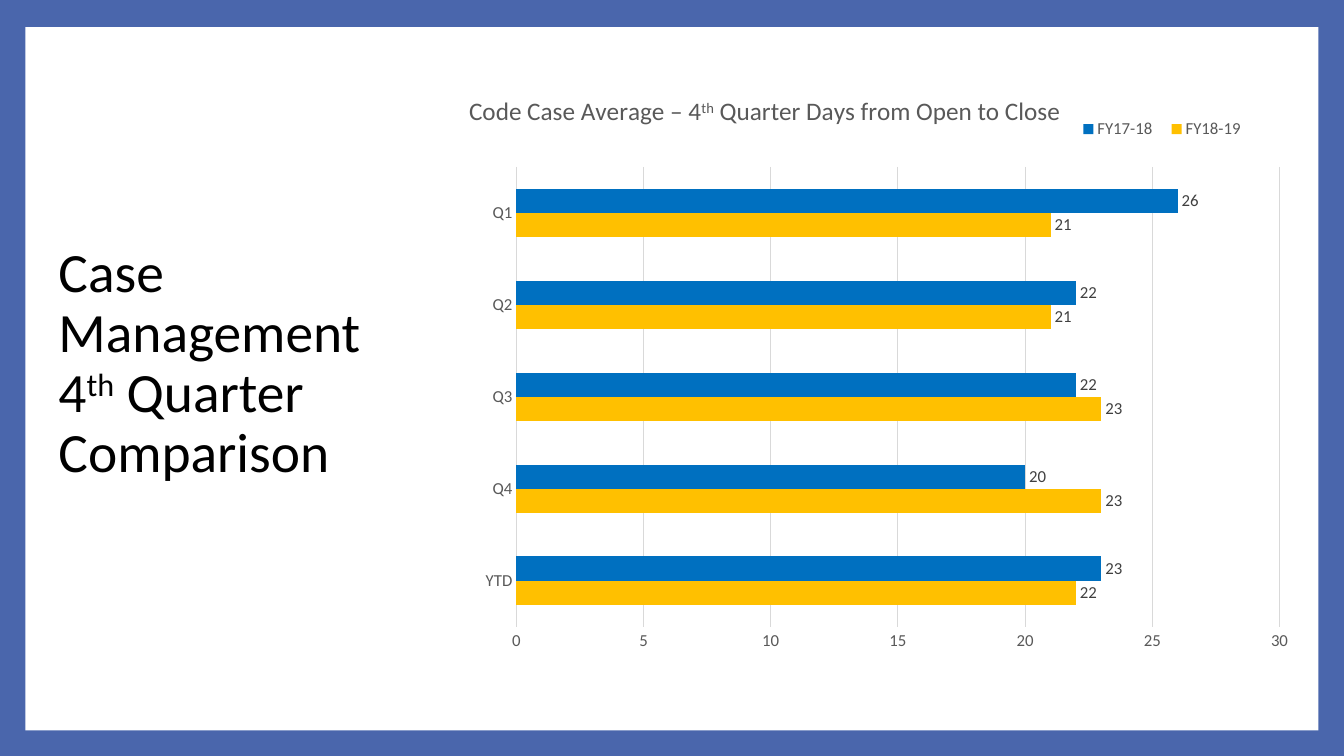
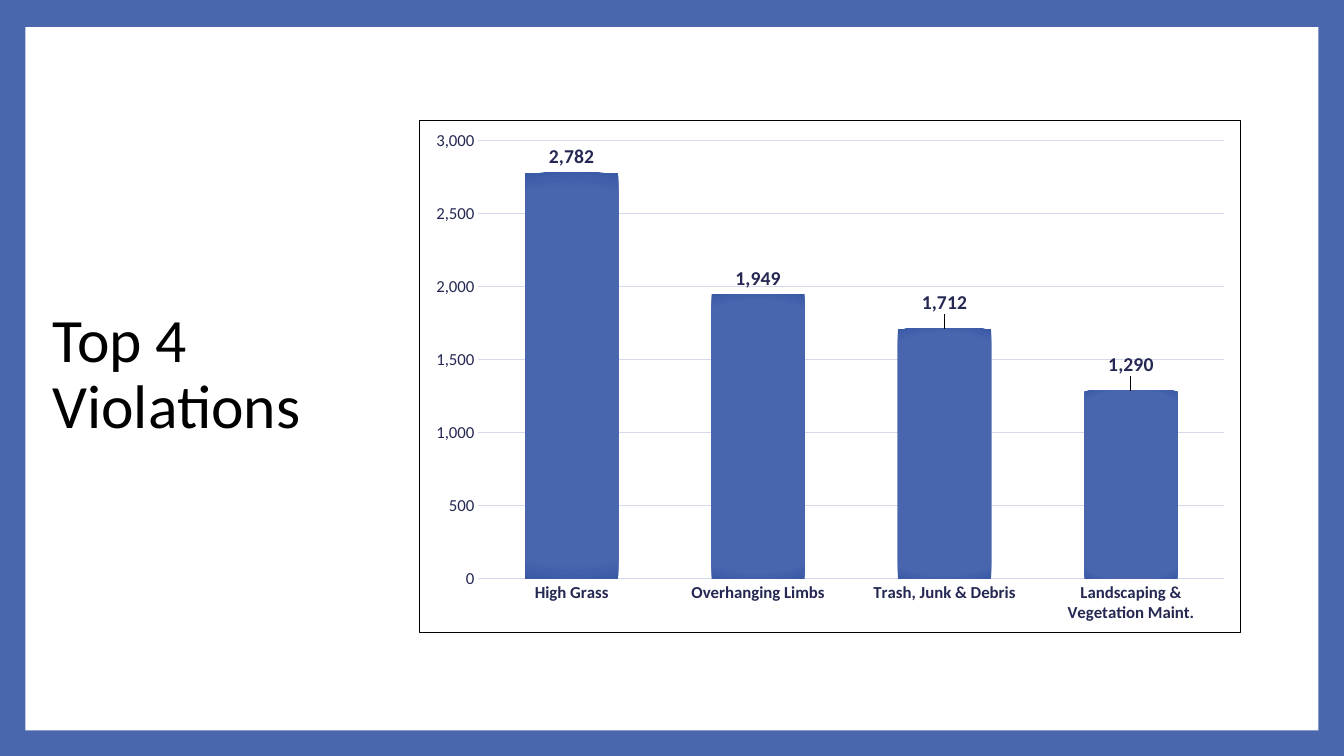
from pptx import Presentation, oxml, util as u
from pptx.chart import data
from pptx.dml.color import RGBColor
from pptx.enum import chart as kinds, shapes, text
from pptx.oxml import ns

FRAME = RGBColor(0x4A, 0x66, 0xAC)
WHITE = RGBColor(0xFF, 0xFF, 0xFF)
BLACK = RGBColor(0, 0, 0)
NAVY = RGBColor(0x24, 0x28, 0x52)
LAVENDER = RGBColor(0xD6, 0xD8, 0xED)
GREY = RGBColor(0x59, 0x59, 0x59)
DARK_GREY = RGBColor(0x40, 0x40, 0x40)
LIGHT_GREY = RGBColor(0xD9, 0xD9, 0xD9)
BLUE = RGBColor(0x00, 0x70, 0xC0)
GOLD = RGBColor(0xFF, 0xC0, 0x00)


def style(font, color, size, bold=False):
    for name, value in {"name": "Calibri", "size": u.Pt(size), "bold": bold}.items():
        setattr(font, name, value)
    font.color.rgb = color


def arrange(parent, index, mode, target="", **shares):
    for old in parent.xpath("c:layout"):
        parent.remove(old)
    inner = f'<c:layoutTarget val="{target}"/>' if target else ""
    values = "".join(f'<c:{key} val="{share}"/>' for key, share in shares.items())
    parent.insert(index, oxml.parse_xml(
        f'<c:layout {ns.nsdecls("c")}><c:manualLayout>{inner}'
        f'<c:xMode val="{mode}"/><c:yMode val="{mode}"/>{values}'
        f'</c:manualLayout></c:layout>'))


deck = Presentation()
deck.slide_width, deck.slide_height = u.Inches(13.33), u.Inches(7.5)
COL, ROW = deck.slide_width / 100, deck.slide_height / 100
UNITS = (COL, ROW, COL, ROW)
layout = deck.slide_layouts[5]
background = deck.slide_master.background.fill
background.solid()
background.fore_color.rgb = FRAME

pages = [
    {
        "title": (3.6, 38.4, 30, 19.7), "title_size": 39.6,
        "spans": ["Case ", "\n", "Management", "\n", "4", "th", " Quarter Comparison"],
        "chart": (34.05, 10.55, 62.4, 76.95),
        "kind": kinds.XL_CHART_TYPE.BAR_CLUSTERED, "format": "General",
        "categories": ["YTD", "Q4", "Q3", "Q2", "Q1"],
        "series": {"FY18-19": (22, 23, 23, 21, 21), "FY17-18": (23, 20, 22, 22, 26)},
        "gap": 182, "overlap": 0, "top": 30, "step": 5,
        "ink": GREY, "grid": LIGHT_GREY, "bold": False,
        "label_ink": DARK_GREY, "label_size": 12,
    },
    {
        "title": (3.15, 39.85, 29.55, 19.7), "title_size": 44,
        "spans": ["Top 4 Violations"],
        "chart": (31.2, 15.9, 61.15, 67.9),
        "kind": kinds.XL_CHART_TYPE.COLUMN_CLUSTERED, "format": "#,##0",
        "categories": ["High Grass", "Overhanging Limbs", "Trash, Junk & Debris",
                       "Landscaping & Vegetation Maint."],
        "series": {"Series 1": (2782, 1949, 1712, 1290)},
        "gap": 100, "overlap": -24, "top": 3000, "step": 500,
        "ink": NAVY, "grid": LAVENDER, "bold": True,
        "label_ink": NAVY, "label_size": 14,
    },
]

charts = []
for page in pages:
    slide = deck.slides.add_slide(layout)
    title = slide.shapes.title
    title.left, title.top, title.width, title.height = (
        int(share * unit) for share, unit in zip(page["title"], UNITS))
    title.text_frame.word_wrap = True
    title.text_frame.auto_size = text.MSO_AUTO_SIZE.NONE
    title.text_frame.vertical_anchor = text.MSO_ANCHOR.MIDDLE
    para = title.text_frame.paragraphs[0]
    para.alignment, para.line_spacing = text.PP_ALIGN.LEFT, 0.9
    for words in page["spans"]:
        if words == "\n":
            para.add_line_break()
            continue
        span = para.add_run()
        span.text = words
        style(span.font, BLACK, page["title_size"])
        if words == "th":
            span.font._element.set("baseline", "30000")

    numbers = data.CategoryChartData(number_format=page["format"])
    numbers.categories = page["categories"]
    for name, values in page["series"].items():
        numbers.add_series(name, values)
    place = [int(share * unit) for share, unit in zip(page["chart"], UNITS)]
    chart = slide.shapes.add_chart(page["kind"], *place, numbers).chart
    charts.append(chart)
    style(chart.font, BLACK, 10)
    chart.has_title = chart.has_legend = False

    plot = chart.plots[0]
    plot.vary_by_categories = False
    plot.gap_width, plot.overlap = page["gap"], page["overlap"]
    plot.has_data_labels = True
    labels = plot.data_labels
    labels.show_value = True
    labels.position = kinds.XL_LABEL_POSITION.OUTSIDE_END
    labels.number_format, labels.number_format_is_linked = page["format"], False
    style(labels.font, page["label_ink"], page["label_size"], page["bold"])

    for axis, bold in ((chart.category_axis, page["bold"]), (chart.value_axis, False)):
        axis.major_tick_mark = axis.minor_tick_mark = kinds.XL_TICK_MARK.NONE
        style(axis.tick_labels.font, page["ink"], 12, bold)
    scale = chart.value_axis
    scale.minimum_scale, scale.maximum_scale, scale.major_unit = 0, page["top"], page["step"]
    scale.tick_labels.number_format = page["format"]
    scale.tick_labels.number_format_is_linked = False
    scale.format.line.fill.background()
    for line in (chart.category_axis.format.line, scale.major_gridlines.format.line):
        line.color.rgb, line.width = page["grid"], u.Pt(0.75)

panel = deck.slides[0].shapes.add_shape(
    shapes.MSO_SHAPE.RECTANGLE,
    *(int(share * unit) for share, unit in zip((1.9, 3.6, 96.2, 93), UNITS)))
panel.shadow.inherit = False
panel.fill.solid()
panel.fill.fore_color.rgb = WHITE
panel.line.fill.background()
layout.shapes.element.insert(2, panel.element)

quarters, violations = charts

for series, color in zip(quarters.plots[0].series, (GOLD, BLUE)):
    series.invert_if_negative = False
    series.format.fill.solid()
    series.format.fill.fore_color.rgb = color
quarters.has_title = True
heading = quarters.chart_title.text_frame.paragraphs[0]
for words in ("Code Case Average – 4", "th", " Quarter Days from Open to Close"):
    span = heading.add_run()
    span.text = words
    style(span.font, GREY, 18)
    if words == "th":
        span.font._element.set("baseline", "30000")
quarters.has_legend = True
legend = quarters.legend
legend.position = kinds.XL_LEGEND_POSITION.BOTTOM
legend.include_in_layout = False
style(legend.font, GREY, 12)
arrange(quarters.chart_title._element, 1, "edge", x=0.01, y=0.02)
arrange(legend._element, 1, "edge", x=0.73, y=0.05, w=0.22, h=0.07)
arrange(quarters.element.xpath("c:chart/c:plotArea")[0], 0, "edge", "inner",
        x=0.07, y=0.15, w=0.91, h=0.79)

bars = violations.plots[0].series[0]
bars.invert_if_negative = False
bars.format.line.fill.background()
stops = "".join(
    f'<a:gs pos="{share * 1000}"><a:srgbClr val="{color}"/></a:gs>'
    for share, color in ((0, FRAME), (90, RGBColor(0x48, 0x65, 0xAE)),
                         (100, RGBColor(0x3A, 0x59, 0xA5))))
bars._element.get_or_add_spPr().insert(0, oxml.parse_xml(
    f'<a:gradFill {ns.nsdecls("a")}><a:gsLst>{stops}</a:gsLst><a:path path="circle">'
    '<a:fillToRect l="50000" t="50000" r="50000" b="50000"/></a:path></a:gradFill>'))
bar_labels = bars.data_labels
bar_labels.show_value = True
bar_labels.position = kinds.XL_LABEL_POSITION.OUTSIDE_END
bar_labels.number_format, bar_labels.number_format_is_linked = "#,##0", False
style(bar_labels.font, NAVY, 14, True)
for index in (2, 3):
    label = bars.points[index].data_label
    style(label.font, NAVY, 14, True)
    label.position = kinds.XL_LABEL_POSITION.OUTSIDE_END
    arrange(label.font._element.xpath("ancestor::c:dLbl")[0], 1, "factor", x=0, y=-0.02)
violations.element.xpath("c:txPr")[0].addprevious(oxml.parse_xml(
    f'<c:spPr {ns.nsdecls("c", "a")}><a:noFill/><a:ln w="{u.Pt(0.75)}"><a:solidFill>'
    f'<a:srgbClr val="{BLACK}"/></a:solidFill></a:ln></c:spPr>'))

deck.save("out.pptx")
